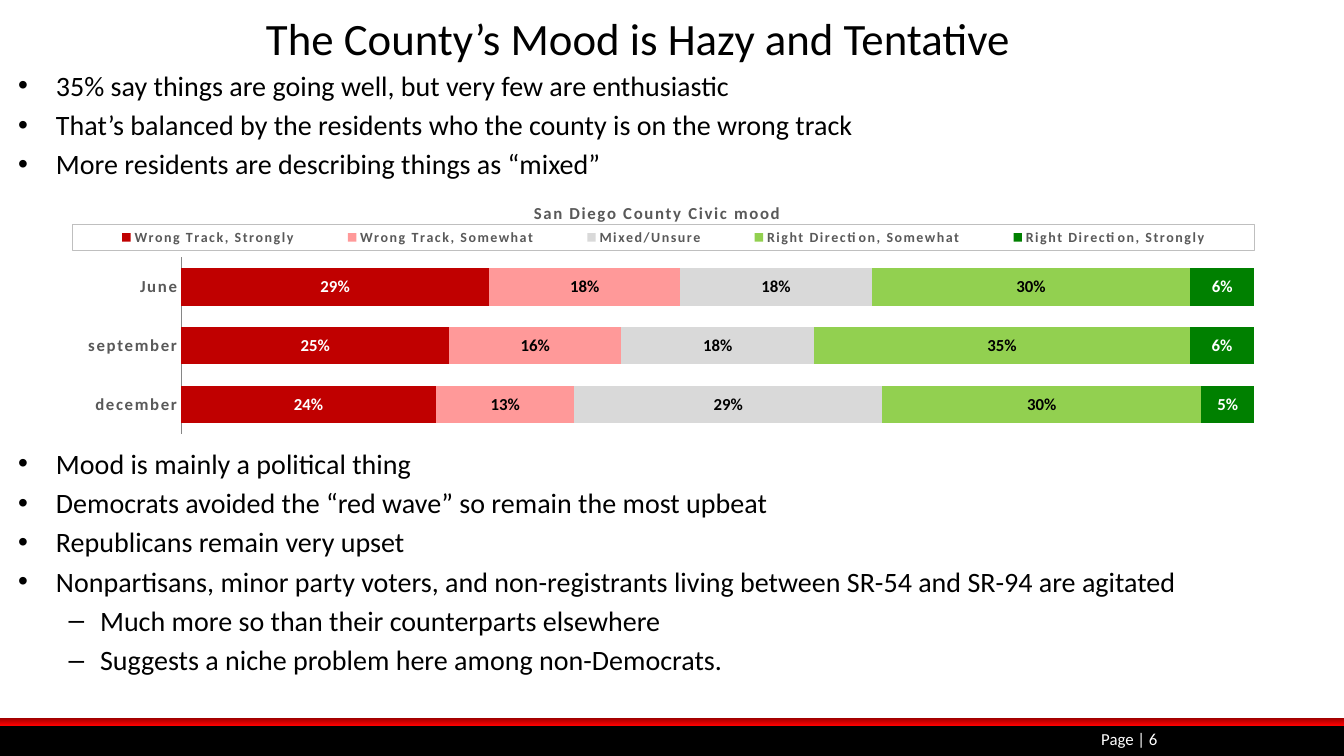
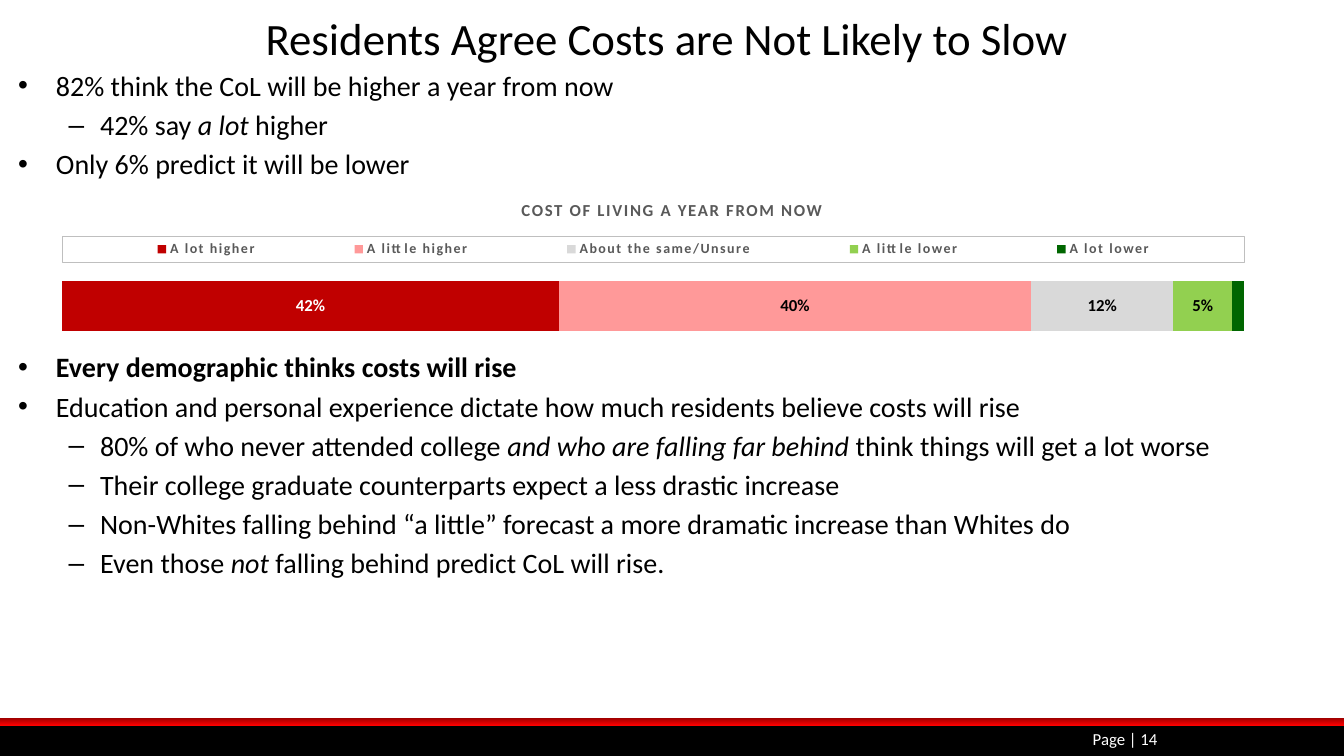
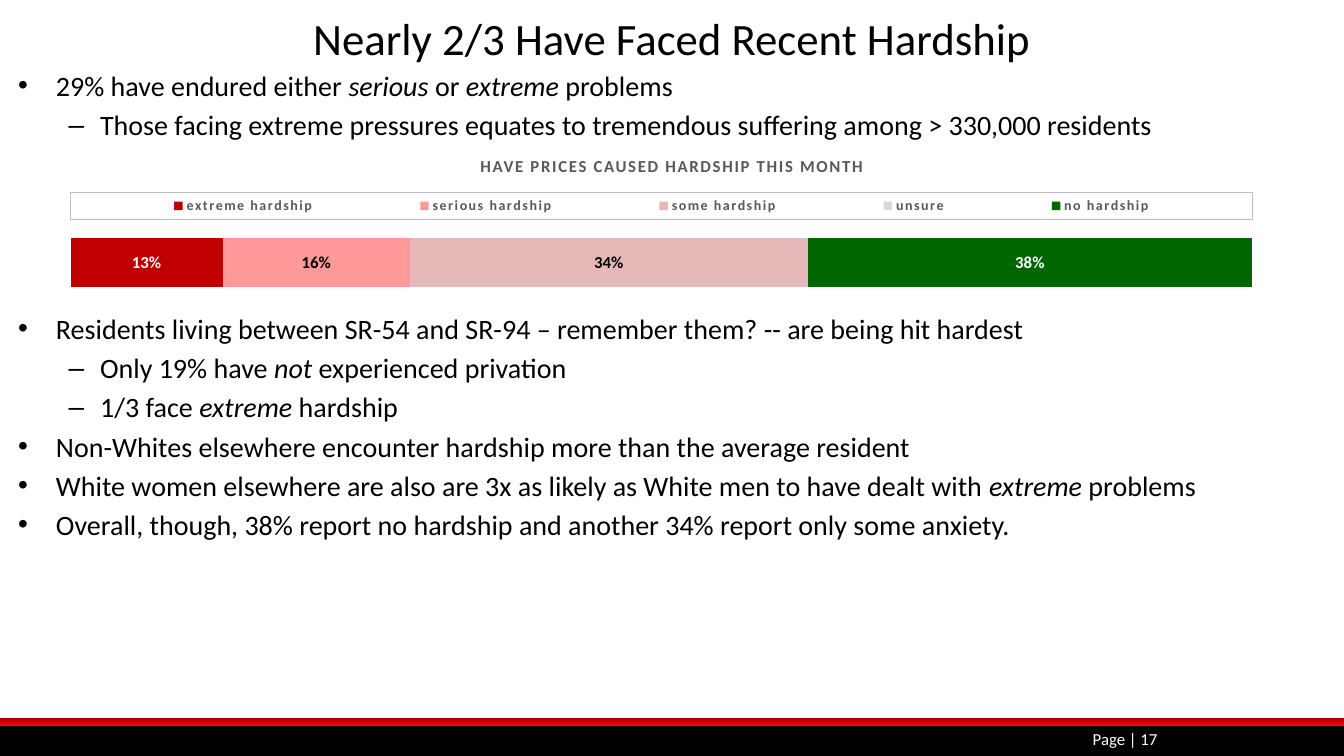
from dataclasses import dataclass

import pptx
import pptx.chart.data
import pptx.dml.color
import pptx.enum.chart
import pptx.enum.shapes
import pptx.enum.text
import pptx.oxml
import pptx.oxml.ns
import pptx.util

Inches, Pt = pptx.util.Inches, pptx.util.Pt
qn = pptx.oxml.ns.qn


@dataclass(frozen=True)
class Theme:
    width: float = 13.33
    height: float = 7.5
    font: str = "Calibri"
    title_size: int = 32
    body_size: int = 20
    chart_size: int = 18
    small_size: int = 12
    legend_size: int = 10
    spacing: str = "120"
    black: str = "000000"
    white: str = "FFFFFF"
    gray: str = "595959"
    border: str = "BFBFBF"
    axis: str = "868686"
    band_dark: str = "970000"
    band_bright: str = "FF0000"
    wrong: str = "C00000"
    wrong_soft: str = "FF9999"
    pale_rose: str = "E6B9B8"
    neutral: str = "D9D9D9"
    right_soft: str = "92D050"
    right: str = "008000"
    right_deep: str = "006600"


THEME = Theme()
DARK_FILLS = (THEME.wrong, THEME.right, THEME.right_deep)
MARGIN = 0.08
BODY_TOP = 0.63
FOOTER_TOP = 7.19
CHART_WIDTH = 11.96
CAPTION_WIDTH = 5.35
SMALLEST_LABELLED = 0.02


@dataclass(frozen=True)
class Bullet:
    """One list line; asterisks enclose italic words."""
    text: str
    level: int = 0
    bold: bool = False


# Layout boxes inside a chart are shares of it: left, top, width, height.
MOOD_LAYOUT = dict(plot=(0.1, 0.25, 0.89, 0.75), legend=(0.01, 0.11, 0.98, 0.11))
SINGLE_BAR_LAYOUT = dict(plot=(0.01, 0.5, 0.98, 0.5), legend=(0.01, 0.3, 0.98, 0.17))

SLIDES = [
    dict(
        page=6,
        title="The County’s Mood is Hazy and Tentative",
        title_span=(0.58, 11.5),
        top_bullets=[
            Bullet("35% say things are going well, but very few are enthusiastic"),
            Bullet("That’s balanced by the residents who the county is on the wrong track"),
            Bullet("More residents are describing things as “mixed”"),
        ],
        chart=dict(
            at=(0.6, 1.97), height=2.34, **MOOD_LAYOUT,
            title="San Diego County Civic mood",
            categories=["december", "september", "June"],
            series=[
                ("Wrong Track, Strongly", (0.24, 0.25, 0.29), THEME.wrong),
                ("Wrong Track, Somewhat", (0.13, 0.16, 0.18), THEME.wrong_soft),
                ("Mixed/Unsure", (0.29, 0.18, 0.18), THEME.neutral),
                ("Right Direction, Somewhat", (0.3, 0.35, 0.3), THEME.right_soft),
                ("Right Direction, Strongly", (0.05, 0.06, 0.06), THEME.right),
            ],
        ),
        lower_top=4.38,
        lower_bullets=[
            Bullet("Mood is mainly a political thing"),
            Bullet("Democrats avoided the “red wave” so remain the most upbeat"),
            Bullet("Republicans remain very upset"),
            Bullet("Nonpartisans, minor party voters, and non-registrants living between "
                   "SR-54 and SR-94 are agitated"),
            Bullet("Much more so than their counterparts elsewhere", 1),
            Bullet("Suggests a niche problem here among non-Democrats.", 1),
        ],
    ),
    dict(
        page=14,
        title="Residents Agree Costs are Not Likely to Slow ",
        title_span=(0.25, 12.83),
        top_bullets=[
            Bullet("82% think the CoL will be higher a year from now"),
            Bullet("42% say *a lot* higher", 1),
            Bullet("Only 6% predict it will be lower"),
        ],
        chart=dict(
            at=(0.5, 1.88), height=1.54, **SINGLE_BAR_LAYOUT,
            caption="COST OF LIVING A YEAR FROM NOW",
            categories=["1"],
            series=[
                ("A lot higher", (0.42,), THEME.wrong),
                ("A little higher", (0.4,), THEME.wrong_soft),
                ("About the same/Unsure", (0.12,), THEME.neutral),
                ("A little lower", (0.05,), THEME.right_soft),
                ("A lot lower", (0.01,), THEME.right_deep),
            ],
        ),
        lower_top=3.42,
        lower_bullets=[
            Bullet("Every demographic thinks costs will rise", bold=True),
            Bullet("Education and personal experience dictate how much residents believe "
                   "costs will rise"),
            Bullet("80% of who never attended college *and who are falling far behind *"
                   "think things will get a lot worse", 1),
            Bullet("Their college graduate counterparts expect a less drastic increase", 1),
            Bullet("Non-Whites falling behind “a little” forecast a more dramatic increase "
                   "than Whites do", 1),
            Bullet("Even those *not* falling behind predict CoL will rise.", 1),
        ],
    ),
    dict(
        page=17,
        title="Nearly 2/3 Have Faced Recent Hardship",
        title_span=(0.25, 12.83),
        top_bullets=[
            Bullet("29% have endured either *serious* or *extreme* problems"),
            Bullet("Those facing extreme pressures equates to tremendous suffering among "
                   "> 330,000 residents", 1),
        ],
        chart=dict(
            at=(0.58, 1.45), height=1.54, **SINGLE_BAR_LAYOUT,
            caption="HAVE PRICES CAUSED HARDSHIP THIS MONTH",
            categories=["1"],
            series=[
                ("extreme hardship", (0.13,), THEME.wrong),
                ("serious hardship", (0.16,), THEME.wrong_soft),
                ("some hardship", (0.34,), THEME.pale_rose),
                ("unsure", (0,), THEME.neutral),
                ("no hardship", (0.38,), THEME.right_deep),
            ],
        ),
        lower_top=3.04,
        lower_bullets=[
            Bullet("Residents living between SR-54 and SR-94 – remember them? -- are being "
                   "hit hardest"),
            Bullet("Only 19% have *not* experienced privation", 1),
            Bullet("1/3 face *extreme* hardship", 1),
            Bullet("Non-Whites elsewhere encounter hardship more than the average resident"),
            Bullet("White women elsewhere are also are 3x as likely as White men to have "
                   "dealt with *extreme* problems"),
            Bullet("Overall, though, 38% report no hardship and another 34% report only "
                   "some anxiety."),
        ],
    ),
]


def rgb(color):
    return pptx.dml.color.RGBColor.from_string(color)


def style_font(font, size, color, bold=False):
    font.name, font.size, font.bold = THEME.font, Pt(size), bold
    font.color.rgb = rgb(color)


def move(shape, left, top, width, height):
    shape.left, shape.top = Inches(left), Inches(top)
    shape.width, shape.height = Inches(width), Inches(height)


def space_letters(element):
    for properties in element.xpath(".//a:defRPr | .//a:rPr"):
        properties.set("spc", THEME.spacing)


def write_line(shape, text, size, color, alignment, bold=False):
    """Fill a shape with one vertically centred line."""
    frame = shape.text_frame
    frame.text = text
    frame.word_wrap = True
    frame.auto_size = pptx.enum.text.MSO_AUTO_SIZE.NONE
    frame.vertical_anchor = pptx.enum.text.MSO_ANCHOR.MIDDLE
    paragraph = frame.paragraphs[0]
    paragraph.alignment = alignment
    style_font(paragraph.runs[0].font, size, color, bold)


def write_bullets(placeholder, bullets, top, bottom):
    move(placeholder, MARGIN, top, THEME.width - 2 * MARGIN, bottom - top)
    frame = placeholder.text_frame
    frame.text = "\n".join(bullet.text for bullet in bullets)
    frame.auto_size = pptx.enum.text.MSO_AUTO_SIZE.NONE
    for paragraph, bullet in zip(frame.paragraphs, bullets):
        paragraph.level = bullet.level
        paragraph.clear()
        for position, part in enumerate(bullet.text.split("*")):
            run = paragraph.add_run()
            run.text = part
            style_font(run.font, THEME.body_size, THEME.black, bullet.bold)
            run.font.italic = position % 2 == 1


def add_layout(parent, after, box, inner=False):
    """Place a chart part by hand, behind the child that must precede its layout."""
    for existing in parent.findall(qn("c:layout")):
        parent.remove(existing)
    target = '<c:layoutTarget val="inner"/>' if inner else ""
    modes = "".join(f'<c:{name}Mode val="edge"/>' for name in "xy")
    sizes = "".join(f'<c:{name} val="{value}"/>' for name, value in zip("xywh", box))
    layout = pptx.oxml.parse_xml(
        f'<c:layout {pptx.oxml.ns.nsdecls("c")}><c:manualLayout>'
        f"{target}{modes}{sizes}</c:manualLayout></c:layout>")
    if after:
        parent.find(qn(after)).addnext(layout)
    else:
        parent.insert(0, layout)


def format_legend(chart, box):
    chart.has_legend = True
    legend = chart.legend
    legend.position = pptx.enum.chart.XL_LEGEND_POSITION.TOP
    legend.include_in_layout = True
    style_font(legend.font, THEME.legend_size, THEME.gray, True)
    element = chart.element.xpath(".//c:legend")[0]
    add_layout(element, "c:legendPos", box)
    element.find(qn("c:overlay")).addnext(pptx.oxml.parse_xml(
        f'<c:spPr {pptx.oxml.ns.nsdecls("c", "a")}><a:ln w="9525"><a:solidFill>'
        f'<a:srgbClr val="{THEME.border}"/></a:solidFill></a:ln></c:spPr>'))
    space_letters(element)


def format_axes(chart, show_categories):
    values, categories = chart.value_axis, chart.category_axis
    values.minimum_scale, values.maximum_scale, values.major_unit = 0, 1, 0.2
    values.has_major_gridlines = False
    values.visible = False
    categories.visible = show_categories
    categories.major_tick_mark = pptx.enum.chart.XL_TICK_MARK.NONE
    categories.format.line.color.rgb = rgb(THEME.axis)
    style_font(categories.tick_labels.font, THEME.small_size, THEME.gray, True)
    space_letters(chart.element.xpath(".//c:catAx")[0])


def format_title(chart, text):
    chart.has_title = bool(text)
    if not text:
        return
    frame = chart.chart_title.text_frame
    frame.text = text
    style_font(frame.paragraphs[0].runs[0].font, THEME.small_size, THEME.gray, True)
    element = chart.element.xpath("./c:chart/c:title")[0]
    add_layout(element, "c:tx", (0.39, 0))
    space_letters(element)


def format_bars(chart, colors):
    plot = chart.plots[0]
    plot.gap_width, plot.overlap, plot.vary_by_categories = 57, 100, False
    for series, color in zip(plot.series, colors):
        series.format.fill.solid()
        series.format.fill.fore_color.rgb = rgb(color)
        if max(series.values) < SMALLEST_LABELLED:
            continue
        labels = series.data_labels
        labels.show_value = True
        labels.number_format, labels.number_format_is_linked = "0%", False
        label_color = THEME.white if color in DARK_FILLS else THEME.black
        style_font(labels.font, THEME.small_size, label_color, True)


def add_bar_chart(slide, content):
    data = pptx.chart.data.CategoryChartData(number_format="0%")
    data.categories = content["categories"]
    for name, values, _ in content["series"]:
        data.add_series(name, values)
    left, top = content["at"]
    chart = slide.shapes.add_chart(
        pptx.enum.chart.XL_CHART_TYPE.BAR_STACKED_100, Inches(left), Inches(top),
        Inches(CHART_WIDTH), Inches(content["height"]), data).chart
    style_font(chart.font, THEME.chart_size, THEME.black)
    format_title(chart, content.get("title"))
    format_legend(chart, content["legend"])
    format_axes(chart, show_categories=len(content["categories"]) > 1)
    format_bars(chart, [color for _, _, color in content["series"]])
    add_layout(chart.element.xpath(".//c:plotArea")[0], None, content["plot"], inner=True)
    if "caption" in content:
        caption = slide.shapes.add_textbox(0, 0, 0, 0)
        move(caption, (THEME.width - CAPTION_WIDTH) / 2, top + 0.05, CAPTION_WIDTH, 0.3)
        write_line(caption, content["caption"], THEME.small_size, THEME.gray,
                   pptx.enum.text.PP_ALIGN.CENTER, True)
        space_letters(caption.element)


def add_footer_bands(slide, layout):
    """Draw the black and red bands, then hand them to the shared layout."""
    bands = []
    for left, top, height in ((0, FOOTER_TOP, THEME.height - FOOTER_TOP), (-0.02, 7.12, 0.08)):
        band = slide.shapes.add_shape(pptx.enum.shapes.MSO_SHAPE.RECTANGLE, 0, 0, 0, 0)
        move(band, left, top, THEME.width - left, height)
        band.shadow.inherit = False
        band.line.fill.background()
        bands.append(band)
    black_band, red_band = bands
    black_band.fill.solid()
    black_band.fill.fore_color.rgb = rgb(THEME.black)
    red_band.fill.gradient()
    red_band.fill.gradient_angle = 270
    for stop, color in zip(red_band.fill.gradient_stops, (THEME.band_dark, THEME.band_bright)):
        stop.color.rgb = rgb(color)
    for position, band in enumerate(bands, start=2):
        layout.shapes.element.insert(position, band.element)


def build_slide(slide, content):
    title, top_list, lower_list = slide.placeholders
    title_left, title_width = content["title_span"]
    move(title, title_left, 0.05, title_width, 0.64)
    write_line(title, content["title"], THEME.title_size, THEME.black,
               pptx.enum.text.PP_ALIGN.CENTER)
    write_bullets(top_list, content["top_bullets"], BODY_TOP, content["chart"]["at"][1])
    write_bullets(lower_list, content["lower_bullets"], content["lower_top"], FOOTER_TOP)
    add_bar_chart(slide, content["chart"])
    page = slide.shapes.add_textbox(0, 0, 0, 0)
    move(page, 9.25, 7.2, 2.33, 0.25)
    write_line(page, f"Page | {content['page']}", THEME.small_size, THEME.white,
               pptx.enum.text.PP_ALIGN.RIGHT)


def main():
    presentation = pptx.Presentation()
    presentation.slide_width = Inches(THEME.width)
    presentation.slide_height = Inches(THEME.height)
    layout = presentation.slide_layouts.get_by_name("Two Content")
    slides = [presentation.slides.add_slide(layout) for _ in SLIDES]
    add_footer_bands(slides[0], layout)
    for slide, content in zip(slides, SLIDES):
        build_slide(slide, content)
    presentation.save("out.pptx")


if __name__ == "__main__":
    main()
